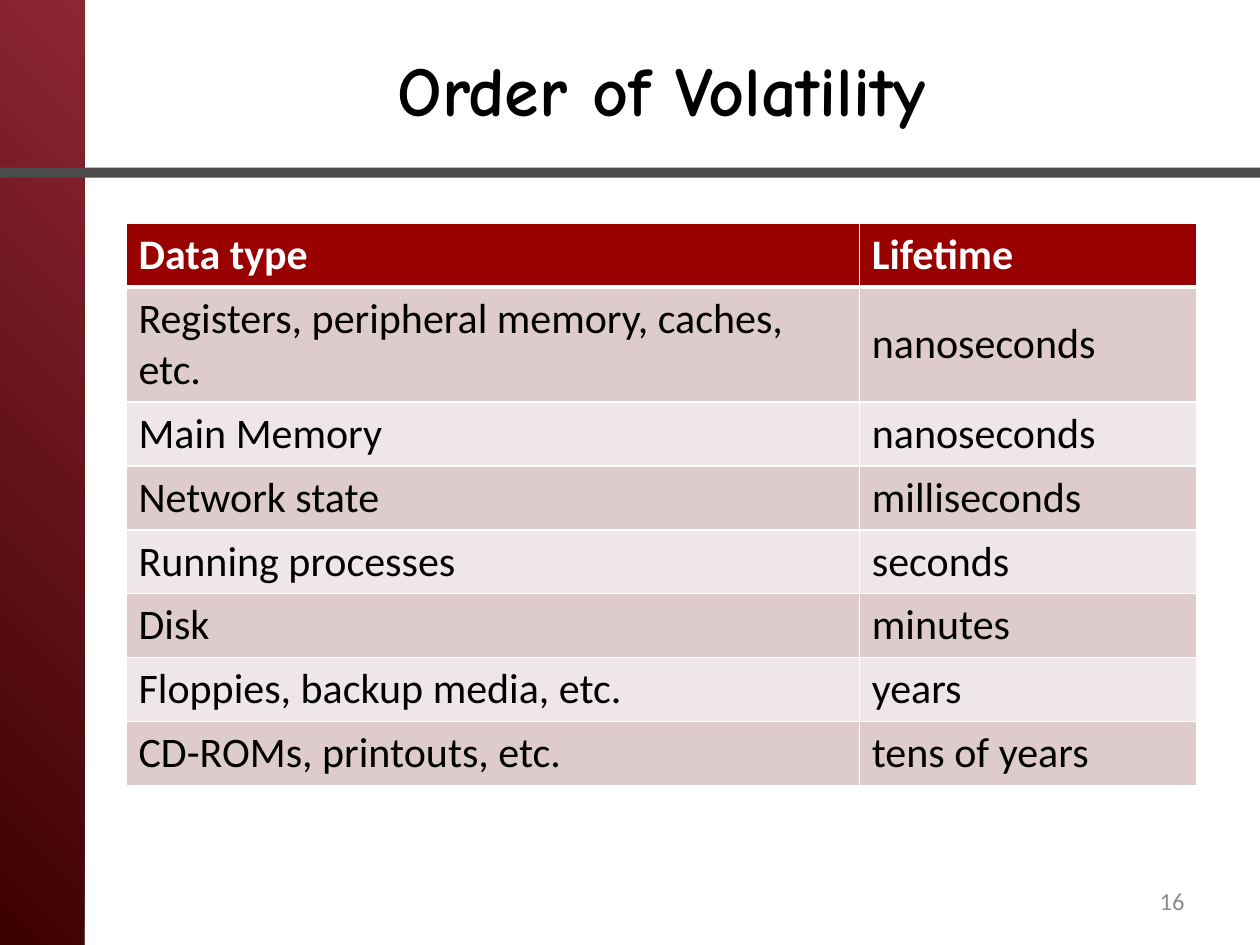
from dataclasses import dataclass

from lxml.etree import SubElement
from pptx import Presentation
from pptx.dml.color import RGBColor
from pptx.enum.shapes import MSO_SHAPE
from pptx.enum.text import MSO_ANCHOR, PP_ALIGN
from pptx.oxml.ns import qn
from pptx.util import Inches, Pt


@dataclass(frozen=True)
class Theme:
    title_font: str = "Comic Neue"
    body_font: str = "Calibri"
    title_size: int = 40
    table_size: int = 24
    number_size: int = 14
    black: str = "000000"
    white: str = "FFFFFF"
    gray: str = "8C8C8C"
    rule: str = "4B4B4B"
    band_dark: str = "3C0000"
    band_light: str = "8C2633"
    header: str = "990000"
    stripes: tuple = ("DECCCC", "EFE7E7")


THEME = Theme()

ROWS = [
    ("Data type", "Lifetime"),
    ("Registers, peripheral memory, caches, etc.", "nanoseconds"),
    ("Main Memory", "nanoseconds"),
    ("Network state", "milliseconds"),
    ("Running processes", "seconds"),
    ("Disk", "minutes"),
    ("Floppies, backup media, etc.", "years"),
    ("CD-ROMs, printouts, etc.", "tens of years"),
]
COLUMN_WIDTHS = (5.82, 2.68)
ROW_HEIGHT = 0.41


def write_text(tf, text, size, color, font=THEME.body_font, bold=False,
               align=PP_ALIGN.LEFT, anchor=MSO_ANCHOR.MIDDLE):
    tf.word_wrap = True
    tf.vertical_anchor = anchor
    p = tf.paragraphs[0]
    p.alignment = align
    r = p.add_run()
    r.text = text
    r.font.name = font
    r.font.size = Pt(size)
    r.font.bold = bold
    r.font.color.rgb = RGBColor.from_string(color)


def add_bar(s, left, top, width, height):
    sp = s.shapes.add_shape(MSO_SHAPE.RECTANGLE, Inches(left), Inches(top),
                            Inches(width), Inches(height))
    sp.shadow.inherit = False
    sp.line.fill.background()
    return sp


def add_backdrop(s):
    # Gradient band on the left, rule below the title
    band = add_bar(s, 0, 0, 0.67, 7.5)
    band.fill.gradient()
    band.fill.gradient_angle = 45
    colors = (THEME.band_dark, THEME.band_light)
    for position, (stop, color) in enumerate(zip(band.fill.gradient_stops, colors)):
        stop.position = position
        stop.color.rgb = RGBColor.from_string(color)

    rule = add_bar(s, 0, 1.33, 10, 0.08)
    rule.fill.solid()
    rule.fill.fore_color.rgb = RGBColor.from_string(THEME.rule)


def add_title(s, text):
    title = s.shapes.title
    title.left, title.top = Inches(1), Inches(0.15)
    title.width, title.height = Inches(8.5), Inches(1.1)
    write_text(title.text_frame, text, THEME.title_size, THEME.black,
               font=THEME.title_font, bold=True, align=PP_ALIGN.CENTER)


def set_borders(cell, **widths):
    # Borders must come before the fill in the cell properties
    tcPr = cell._tc.get_or_add_tcPr()
    for side, width in widths.items():
        ln = SubElement(tcPr, qn(f"a:ln{side}"), w=str(Pt(width)))
        fill = SubElement(ln, qn("a:solidFill"))
        SubElement(fill, qn("a:srgbClr"), val=THEME.white)


def add_lifetime_table(s):
    frame = s.shapes.add_table(len(ROWS), len(COLUMN_WIDTHS), Inches(1),
                               Inches(1.77), Inches(8.5), Inches(4.4))
    table = frame.table
    for column, width in zip(table.columns, COLUMN_WIDTHS):
        column.width = Inches(width)
    for i, row in enumerate(ROWS):
        table.rows[i].height = Inches(ROW_HEIGHT)
        header = i == 0
        for j, text in enumerate(row):
            cell = table.cell(i, j)
            set_borders(cell, L=1, R=1, T=3 if i == 1 else 1, B=3 if header else 1)
            cell.fill.solid()
            cell.fill.fore_color.rgb = RGBColor.from_string(
                THEME.header if header else THEME.stripes[(i - 1) % 2])
            write_text(cell.text_frame, text, THEME.table_size,
                       THEME.white if header else THEME.black, bold=header)
            cell.vertical_anchor = MSO_ANCHOR.TOP if header else MSO_ANCHOR.MIDDLE
    frame.height = Inches(4.4)


def add_slide_number(s, number):
    box = s.shapes.add_textbox(Inches(7.67), Inches(6.95), Inches(1.83), Inches(0.4))
    write_text(box.text_frame, number, THEME.number_size, THEME.gray,
               align=PP_ALIGN.RIGHT)


def main():
    prs = Presentation()
    prs.slide_width, prs.slide_height = Inches(10), Inches(7.5)
    s = prs.slides.add_slide(prs.slide_layouts[5])
    add_backdrop(s)
    add_title(s, "Order of Volatility")
    add_lifetime_table(s)
    add_slide_number(s, "16")
    prs.save("out.pptx")


if __name__ == "__main__":
    main()
